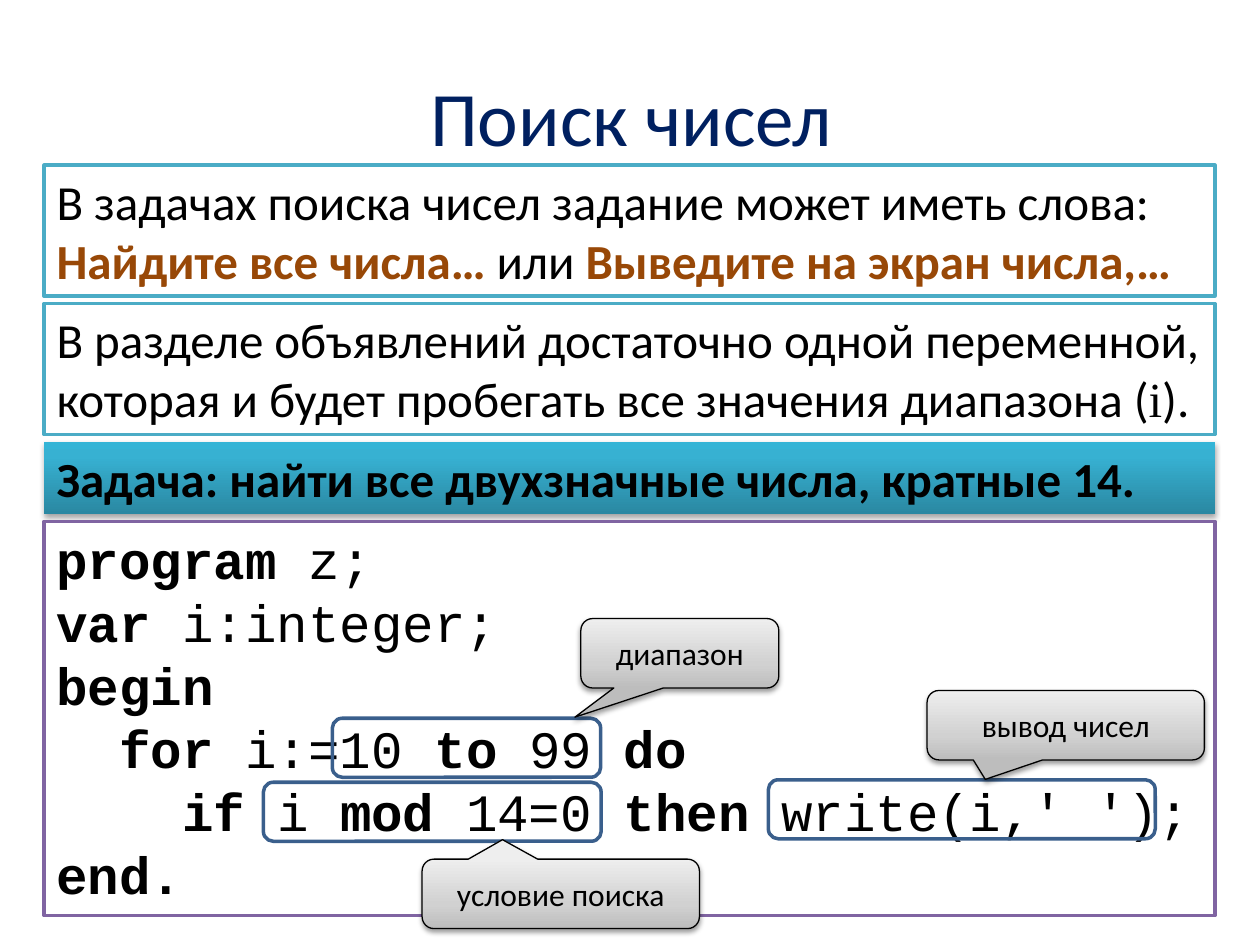
import dataclasses
from typing import Optional

import lxml.etree
import pptx
import pptx.dml.color
import pptx.enum.shapes
import pptx.enum.text
import pptx.oxml.ns
import pptx.util

Cm = pptx.util.Cm
Pt = pptx.util.Pt
Shapes = pptx.enum.shapes.MSO_SHAPE
Align = pptx.enum.text.PP_ALIGN
Anchor = pptx.enum.text.MSO_ANCHOR
qn = pptx.oxml.ns.qn


@dataclasses.dataclass(frozen=True)
class Theme:
    title: str = "002060"
    text: str = "000000"
    accent: str = "984807"
    paper: str = "FFFFFF"
    rule_border: str = "4BACC6"
    code_border: str = "8064A2"
    marker_border: str = "3A5F8C"
    task_stops: tuple = ((0, "2A88A2"), (80, "37B1D2"), (100, "34B4D6"))
    callout_stops: tuple = ((0, "BDBDBD"), (35, "D1D1D1"), (100, "EEEEEE"))
    body_font: str = "Calibri"
    code_font: str = "Courier New"
    variable_font: str = "Times New Roman"
    title_size: float = 44
    body_size: float = 28
    code_size: float = 30
    callout_size: float = 18
    border_width: float = 2
    callout_border_width: float = 0.75


THEME = Theme()


@dataclasses.dataclass(frozen=True)
class Run:
    text: str
    bold: bool = False
    color: str = THEME.text
    font: str = THEME.body_font


@dataclasses.dataclass(frozen=True)
class Area:
    left: float
    top: float
    width: float
    height: float


@dataclasses.dataclass(frozen=True)
class Panel:
    height: float
    lines: list
    size: float = THEME.body_size
    border: Optional[str] = THEME.rule_border
    stops: tuple = ()
    shadow_opacity: int = 0


@dataclasses.dataclass(frozen=True)
class Annotation:
    marker: Area
    callout: Area
    tail: tuple
    label: str


def code(text: str, bold: bool = False) -> Run:
    return Run(text, bold, font=THEME.code_font)


def rgb(color: str) -> pptx.dml.color.RGBColor:
    return pptx.dml.color.RGBColor.from_string(color)


def add_box(slide, kind, area: Area, fill: Optional[str] = None,
            border: Optional[str] = None, width: float = THEME.border_width):
    box = slide.shapes.add_shape(kind, *map(Cm, dataclasses.astuple(area)))
    box.shadow.inherit = False
    if fill:
        box.fill.solid()
        box.fill.fore_color.rgb = rgb(fill)
    else:
        box.fill.background()
    if border:
        box.line.color.rgb = rgb(border)
        box.line.width = Pt(width)
    else:
        box.line.fill.background()
    return box


def add_color(parent, color: str):
    return lxml.etree.SubElement(parent, qn("a:srgbClr"), val=color)


def set_gradient(box, stops: tuple) -> None:
    box.fill.gradient()
    box.fill.gradient_angle = 90
    stop_list = box.element.spPr.find(".//" + qn("a:gsLst"))
    for stop in list(stop_list):
        stop_list.remove(stop)
    for percent, color in stops:
        add_color(lxml.etree.SubElement(stop_list, qn("a:gs"), pos=str(percent * 1000)), color)


def set_shadow(box, opacity: int) -> None:
    effects = box.element.spPr.find(qn("a:effectLst"))
    shadow = lxml.etree.SubElement(
        effects, qn("a:outerShdw"), blurRad=str(Pt(3.1)), dist=str(Pt(1.7)),
        dir="5400000", rotWithShape="0")
    lxml.etree.SubElement(add_color(shadow, THEME.text), qn("a:alpha"), val=str(opacity * 1000))


def write_lines(box, lines: list, size: float, align=Align.LEFT, anchor=Anchor.TOP) -> None:
    frame = box.text_frame
    for name, value in {"word_wrap": True, "vertical_anchor": anchor}.items():
        setattr(frame, name, value)
    for index, runs in enumerate(lines):
        paragraph = frame.add_paragraph() if index else frame.paragraphs[0]
        paragraph.alignment = align
        for run in runs:
            piece = paragraph.add_run()
            piece.text = run.text
            font_format = {"name": run.font, "size": Pt(size), "bold": run.bold}
            for name, value in font_format.items():
                setattr(piece.font, name, value)
            piece.font.color.rgb = rgb(run.color)


def draw_panel(slide, panel: Panel, top: float) -> None:
    box = add_box(slide, Shapes.RECTANGLE, Area(0.89, top, 23.6, panel.height),
                  THEME.paper, panel.border)
    if panel.stops:
        set_gradient(box, panel.stops)
        set_shadow(box, panel.shadow_opacity)
    write_lines(box, panel.lines, panel.size)


def draw_annotation(slide, note: Annotation) -> None:
    add_box(slide, Shapes.ROUNDED_RECTANGLE, note.marker, border=THEME.marker_border)
    callout = add_box(slide, Shapes.ROUNDED_RECTANGULAR_CALLOUT, note.callout,
                      border=THEME.text, width=THEME.callout_border_width)
    for index, value in enumerate(note.tail):
        callout.adjustments[index] = value
    set_gradient(callout, THEME.callout_stops)
    set_shadow(callout, 38)
    write_lines(callout, [[Run(note.label)]], THEME.callout_size, Align.CENTER, Anchor.MIDDLE)


PANELS = [
    Panel(2.64, [[
        Run("В задачах поиска чисел задание может иметь слова: "),
        Run("Найдите все числа…", True, THEME.accent),
        Run(" или "),
        Run("Выведите на экран числа,…", True, THEME.accent)]]),
    Panel(2.64, [[
        Run("В разделе объявлений достаточно одной переменной, "
            "которая и будет пробегать все значения диапазона ("),
        Run("i", font=THEME.variable_font),
        Run(").")]]),
    Panel(1.45, [[Run("Задача: найти все двухзначные числа, кратные 14.", True)]],
          border=None, stops=THEME.task_stops, shadow_opacity=35),
    Panel(7.95, [
        [code("program ", True), code("z;")],
        [code("var", True), code(" i:integer;")],
        [code("begin", True)],
        [code("  "), code("for ", True), code("i:=10 "), code("to", True),
         code(" 99 "), code("do", True)],
        [code("    "), code("if ", True), code("i "), code("mod ", True),
         code("14=0 "), code("then", True), code(" write(i,' ');")],
        [code("end.", True)]],
        size=THEME.code_size, border=THEME.code_border),
]

ANNOTATIONS = [
    Annotation(Area(6.7, 14.48, 5.41, 1.19), Area(11.71, 12.47, 3.99, 1.4),
               (-0.53, 0.92, 0.17), "диапазон"),
    Annotation(Area(5.31, 15.77, 6.81, 1.19), Area(8.51, 17.32, 5.59, 1.4),
               (-0.21, -0.78, 0.17), "условие поиска"),
    Annotation(Area(15.49, 15.72, 7.8, 1.19), Area(18.69, 13.92, 5.59, 1.4),
               (-0.29, 0.78, 0.17), "вывод чисел"),
]


def main() -> None:
    deck = pptx.Presentation()
    deck.slide_width, deck.slide_height = Cm(25.4), Cm(19.05)
    slide = deck.slides.add_slide(deck.slide_layouts[6])

    heading = add_box(slide, Shapes.RECTANGLE, Area(1.3, 0.74, 22.86, 3.18), THEME.paper)
    write_lines(heading, [[Run("Поиск чисел", color=THEME.title)]],
                THEME.title_size, Align.CENTER, Anchor.MIDDLE)

    top, gap = 3.33, 0.15
    for panel in PANELS:
        draw_panel(slide, panel, top)
        top += panel.height + gap
    for note in ANNOTATIONS:
        draw_annotation(slide, note)
    deck.save("out.pptx")


if __name__ == "__main__":
    main()
